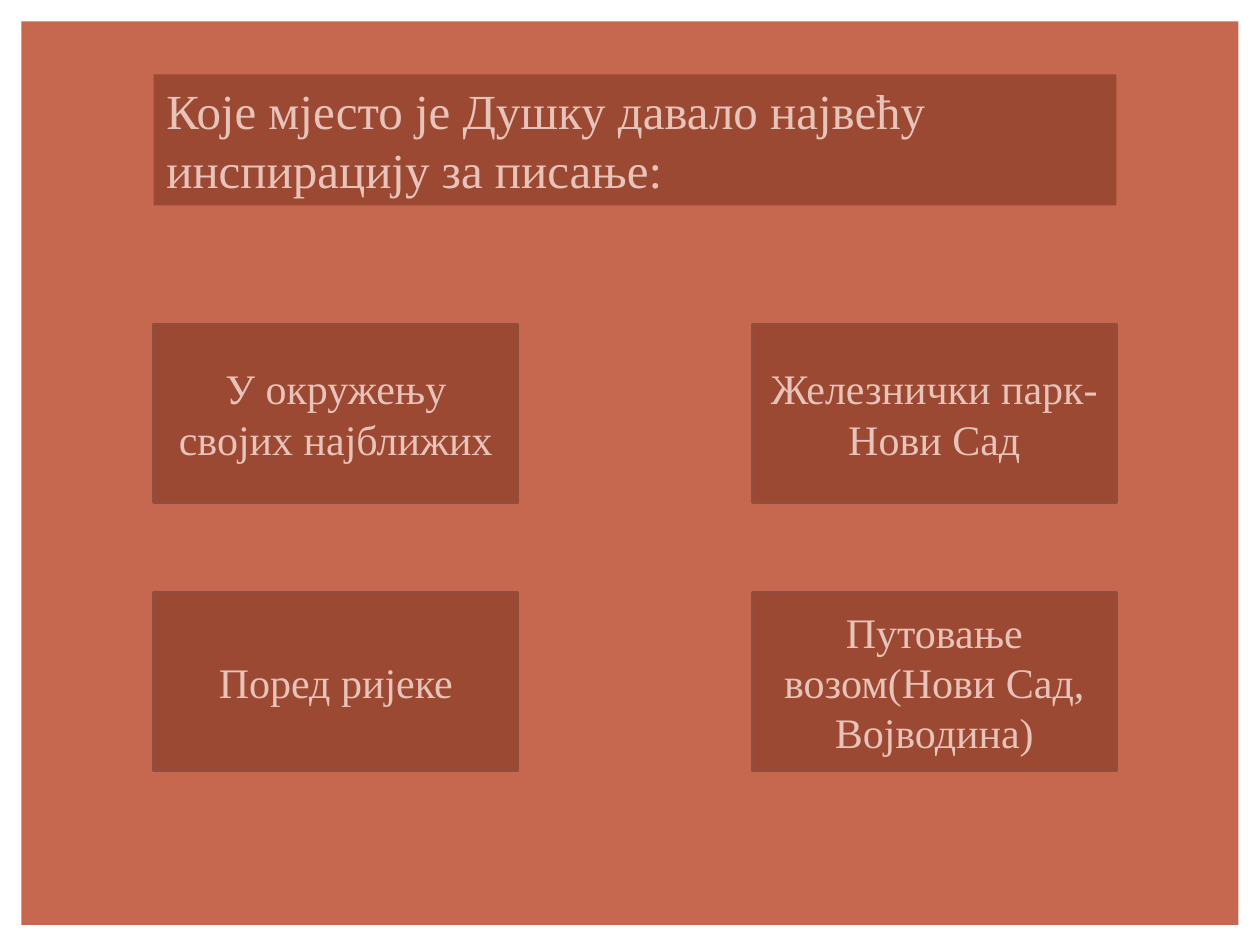
from pptx import Presentation
from pptx.dml.color import RGBColor
from pptx.enum.shapes import MSO_SHAPE
from pptx.enum.text import MSO_ANCHOR, MSO_AUTO_SIZE, PP_ALIGN
from pptx.util import Inches, Pt

RECTANGLE = MSO_SHAPE.RECTANGLE
TOP, MIDDLE = MSO_ANCHOR.TOP, MSO_ANCHOR.MIDDLE
LEFT, CENTER = PP_ALIGN.LEFT, PP_ALIGN.CENTER
NO_AUTOFIT = MSO_AUTO_SIZE.NONE

FONT = "Times New Roman"
PANEL_COLOR = "C5684F"
BOX_COLOR = "9C4933"
BORDER_COLOR = "924E3C"
TEXT_COLOR = "E8C3B9"

QUESTION = "Које мјесто је Душку давало највећу инспирацију за писање:"
ANSWERS = [
    [["У окружењу својих најближих"], ["Железнички парк-", "Нови Сад"]],
    [["Поред ријеке"], ["Путовање возом(Нови Сад, Војводина)"]],
]
ANSWER_LEFTS = [1.22, 5.97]
ANSWER_TOPS = [2.57, 4.7]


def color(hex_value):
    """Return the colour for a hex string."""
    return RGBColor.from_string(hex_value)


def fill_shape(shape, hex_value):
    """Give a shape a solid fill."""
    shape.fill.solid()
    shape.fill.fore_color.rgb = color(hex_value)


def write_text(shape, lines, size, alignment, anchor):
    """Write one paragraph for each line."""
    frame = shape.text_frame
    frame.word_wrap = True
    frame.auto_size = NO_AUTOFIT
    frame.vertical_anchor = anchor
    for index, line in enumerate(lines):
        paragraph = frame.add_paragraph() if index else frame.paragraphs[0]
        paragraph.alignment = alignment
        run = paragraph.add_run()
        run.text = line
        run.font.name = FONT
        run.font.size = Pt(size)
        run.font.color.rgb = color(TEXT_COLOR)


def add_rectangle(slide, left, top, width, height, fill):
    """Add a flat rectangle without an outline."""
    shape = slide.shapes.add_shape(
        RECTANGLE, Inches(left), Inches(top), Inches(width), Inches(height))
    shape.shadow.inherit = False
    fill_shape(shape, fill)
    shape.line.fill.background()
    return shape


def add_question(slide, panel):
    """Place the question in the title, in front of the panel."""
    title = slide.shapes.title
    panel.element.addnext(title.element)
    title.left, title.top = Inches(1.22), Inches(0.59)
    title.width, title.height = Inches(7.64), Inches(1.04)
    fill_shape(title, BOX_COLOR)
    write_text(title, [QUESTION], 28, LEFT, TOP)


def add_answer(slide, left, top, lines):
    """Add one bordered answer box."""
    box = add_rectangle(slide, left, top, 2.89, 1.42, BOX_COLOR)
    box.line.color.rgb = color(BORDER_COLOR)
    box.line.width = Pt(1.5)
    write_text(box, lines, 24, CENTER, MIDDLE)


def main():
    """Build the quiz slide."""
    presentation = Presentation()
    presentation.slide_width = Inches(10)
    presentation.slide_height = Inches(7.5)
    slide = presentation.slides.add_slide(presentation.slide_layouts[5])
    panel = add_rectangle(slide, 0.17, 0.17, 9.66, 7.17, PANEL_COLOR)
    add_question(slide, panel)
    for top, row in zip(ANSWER_TOPS, ANSWERS):
        for left, lines in zip(ANSWER_LEFTS, row):
            add_answer(slide, left, top, lines)
    presentation.save("out.pptx")


if __name__ == "__main__":
    main()
